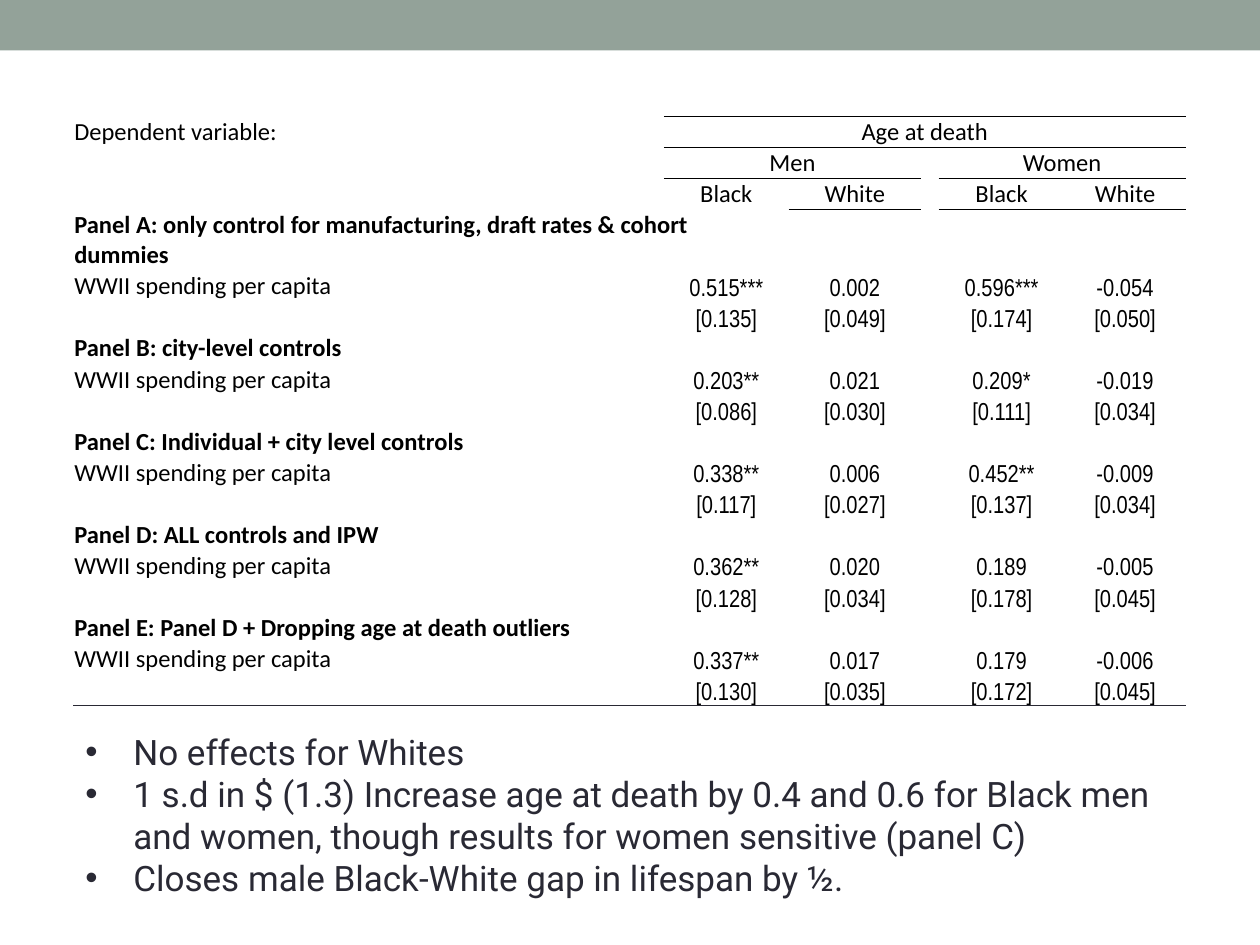
from dataclasses import dataclass
from lxml.etree import SubElement
from pptx import Presentation
from pptx.dml.color import RGBColor as RGB
from pptx.enum.shapes import MSO_SHAPE as Shape
from pptx.enum.text import MSO_ANCHOR as Anchor, PP_ALIGN as Align
from pptx.oxml import parse_xml
from pptx.oxml.ns import qn
from pptx.util import Inches, Pt


@dataclass(frozen=True)
class Theme:
    band: str = "93A299"
    black: str = "000000"
    ink: str = "292934"
    label: str = "Calibri"
    number: str = "Arial Narrow"
    body: str = "Roboto"
    small: int = 14
    large: int = 20


THEME = Theme()
NS = "http://schemas.openxmlformats.org/drawingml/2006/main"
PLAIN = "{2D5ABB26-0587-4C30-8999-92F81FD0307C}"
WIDTHS = [4.69, 0.99, 1.05, 0.14, 1, 0.96]
COLS = [1, 2, 4, 5]
ROW = 0.24
PANELS = [
    ("Panel A: only control for manufacturing, draft rates & cohort dummies",
     ["0.515***", "0.002", "0.596***", "-0.054"],
     ["[0.135]", "[0.049]", "[0.174]", "[0.050]"]),
    ("Panel B: city-level controls",
     ["0.203**", "0.021", "0.209*", "-0.019"],
     ["[0.086]", "[0.030]", "[0.111]", "[0.034]"]),
    ("Panel C: Individual + city level controls",
     ["0.338**", "0.006", "0.452**", "-0.009"],
     ["[0.117]", "[0.027]", "[0.137]", "[0.034]"]),
    ("Panel D: ALL controls and IPW",
     ["0.362**", "0.020", "0.189", "-0.005"],
     ["[0.128]", "[0.034]", "[0.178]", "[0.045]"]),
    ("Panel E: Panel D + Dropping age at death outliers",
     ["0.337**", "0.017", "0.179", "-0.006"],
     ["[0.130]", "[0.035]", "[0.172]", "[0.045]"]),
]
NOTES = [
    "No effects for Whites",
    "1 s.d in $ (1.3) Increase age at death by 0.4 and 0.6 for Black men "
    "and women, though results for women sensitive (panel C)",
    "Closes male Black-White gap in lifespan by ½.",
]


def style(para, font, size, color, bold=False):
    for run in para.runs:
        run.font.name = font
        run.font.size = Pt(size)
        run.font.bold = bold
        run.font.color.rgb = RGB.from_string(color)


def add_band(slide):
    band = slide.shapes.add_shape(Shape.RECTANGLE, 0, 0, Inches(10), Inches(0.4))
    band.shadow.inherit = False
    band.fill.solid()
    band.fill.fore_color.rgb = RGB.from_string(THEME.band)
    band.line.fill.background()


def clear(cell):
    cell.margin_left = cell.margin_right = cell.margin_top = Inches(0.01)
    cell.margin_bottom = 0
    cell.vertical_anchor = Anchor.BOTTOM
    cell.fill.background()
    end = SubElement(cell.text_frame.paragraphs[0]._p, qn("a:endParaRPr"))
    end.set("sz", str(THEME.small * 100))


def write(cell, text, font=THEME.label, bold=False, align=Align.CENTER):
    para = cell.text_frame.paragraphs[0]
    para.add_run().text = text
    para.alignment = align
    style(para, font, THEME.small, THEME.black, bold)


def rule(grid, row, cols, side="lnB", color=THEME.black, width=0.5):
    for col in cols:
        line = parse_xml(
            f'<a:{side} xmlns:a="{NS}" w="{Pt(width)}"><a:solidFill>'
            f'<a:srgbClr val="{color}"/></a:solidFill></a:{side}>')
        grid.cell(row, col)._tc.get_or_add_tcPr().insert(0, line)


def span(grid, row, first, last, text, **look):
    grid.cell(row, first).merge(grid.cell(row, last))
    write(grid.cell(row, first), text, **look)


def fill_head(grid):
    write(grid.cell(0, 0), "Dependent variable:", align=Align.LEFT)
    span(grid, 0, 1, 5, "Age at death")
    span(grid, 1, 1, 2, "Men")
    span(grid, 1, 4, 5, "Women")
    for col, race in zip(COLS, ["Black", "White"] * 2):
        write(grid.cell(2, col), race)
    rule(grid, 0, range(1, 6))
    rule(grid, 0, range(1, 6), "lnT")
    rule(grid, 1, COLS)
    rule(grid, 2, COLS[1:])


def fill_panel(grid, top, panel):
    name, *lines = panel
    if top == 3:
        span(grid, top, 0, 1, name, bold=True, align=Align.LEFT)
    else:
        write(grid.cell(top, 0), name, bold=True, align=Align.LEFT)
    write(grid.cell(top + 1, 0), "WWII spending per capita", align=Align.LEFT)
    for row, line in enumerate(lines, top + 1):
        for col, value in zip(COLS, line):
            write(grid.cell(row, col), value, THEME.number)


def add_results(slide):
    count = 3 + 3 * len(PANELS)
    frame = slide.shapes.add_table(
        count, len(WIDTHS), Inches(0.58), Inches(0.92),
        Inches(sum(WIDTHS)), Inches(ROW * count))
    grid = frame.table
    grid.first_row = grid.horz_banding = False
    grid._tbl.tblPr.find(qn("a:tableStyleId")).text = PLAIN
    for col, width in zip(grid.columns, WIDTHS):
        col.width = Inches(width)
    for row in grid.rows:
        row.height = Inches(ROW)
    for cell in grid.iter_cells():
        clear(cell)
    fill_head(grid)
    for i, panel in enumerate(PANELS):
        fill_panel(grid, 3 + 3 * i, panel)
    rule(grid, count - 1, range(len(WIDTHS)), color=THEME.ink, width=1)


def add_notes(slide):
    box = slide.shapes.add_textbox(
        Inches(0.58), Inches(5.75), Inches(8.92), Inches(1.45))
    frame = box.text_frame
    frame.word_wrap = True
    frame.text = "\n".join(NOTES)
    for para in frame.paragraphs:
        style(para, THEME.body, THEME.large, THEME.ink)
        props = para._p.get_or_add_pPr()
        props.set("marL", str(Inches(0.38)))
        props.set("indent", str(Inches(-0.38)))
        SubElement(props, qn("a:buFont")).set("typeface", "Arial")
        SubElement(props, qn("a:buChar")).set("char", "•")


def main():
    deck = Presentation()
    deck.slide_width, deck.slide_height = Inches(10), Inches(7.5)
    slide = deck.slides.add_slide(deck.slide_layouts[6])
    add_band(slide)
    add_results(slide)
    add_notes(slide)
    deck.save("out.pptx")


if __name__ == "__main__":
    main()
